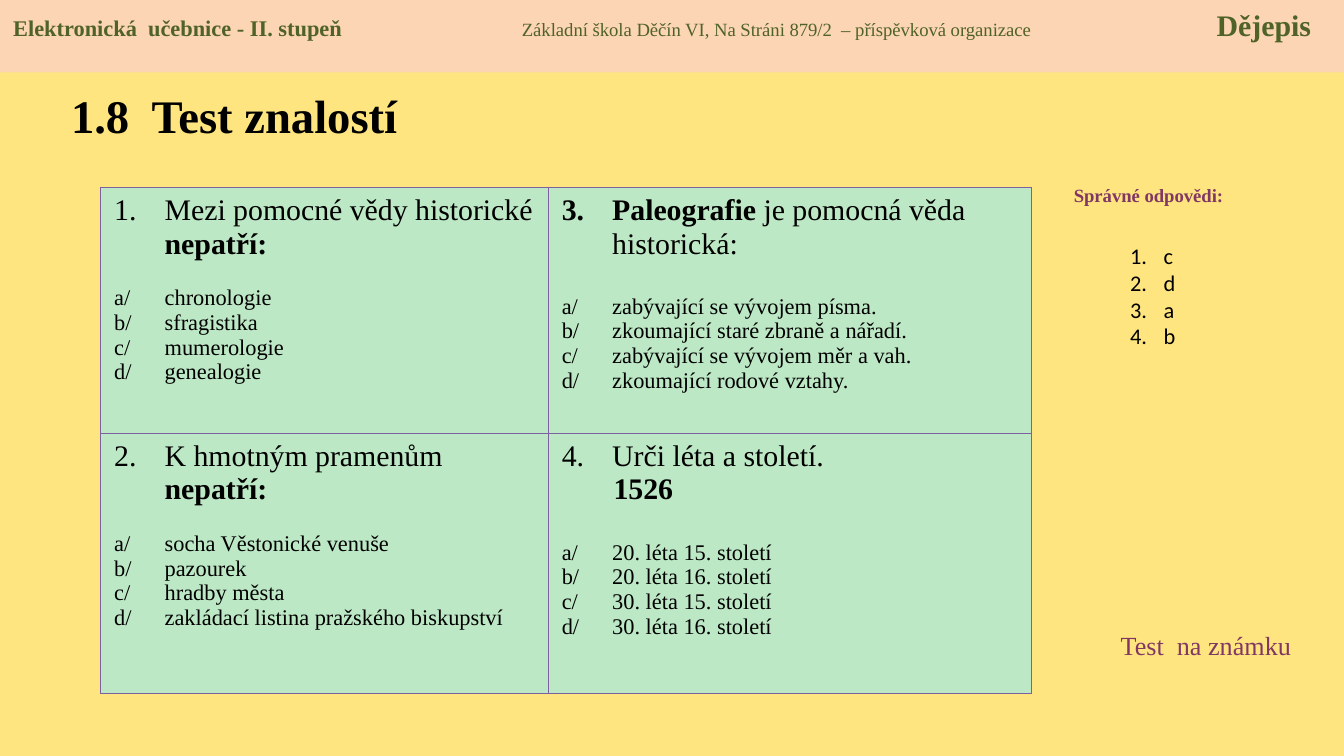
from lxml import etree
from pptx import Presentation
from pptx import util as u
from pptx.dml.color import RGBColor
from pptx.enum import shapes, text
from pptx.oxml import ns

COLORS = {
    "page": "FFE57F", "band": "FCD5B5", "cell": "BDE8C5", "border": "7D60A0",
    "ink": "000000", "green": "4F6228", "plum": "813763",
}
SERIF, SANS = "Times New Roman", "Calibri"
COLUMNS = 100  # grid columns across the slide; rows have the same pitch
HANG = 3.75

QUESTIONS = [
    [
        dict(number=1, title=[("Mezi pomocné vědy historické ", False), ("nepatří:", True)], gap=13.3,
             options=["chronologie", "sfragistika", "mumerologie", "genealogie"]),
        dict(number=3, title=[("Paleografie", True), (" je pomocná věda historická:", False)], gap=18,
             options=["zabývající se vývojem písma.", "zkoumající staré zbraně a nářadí.",
                      "zabývající se vývojem měr a vah.", "zkoumající rodové vztahy."]),
    ],
    [
        dict(number=2, title=[("K hmotným pramenům ", False), ("nepatří:", True)], gap=13.3,
             options=["socha Věstonické venuše", "pazourek", "hradby města",
                      "zakládací listina pražského biskupství"]),
        dict(number=4, title=[("Urči léta a století.", False)], year="1526", gap=18,
             options=["20. léta 15. století", "20. léta 16. století",
                      "30. léta 15. století", "30. léta 16. století"]),
    ],
]


def add_child(parent, tag, **attributes):
    values = {name: str(value) for name, value in attributes.items()}
    return etree.SubElement(parent, ns.qn(tag), values)


class Page:
    """Draws styled elements on one slide, with lengths in grid units."""

    def __init__(self, deck):
        self.pitch = deck.slide_width / COLUMNS
        self.slide = deck.slides.add_slide(deck.slide_layouts[6])
        self.paint(self.slide.background.fill, "page")

    def size(self, units):
        return u.Emu(round(units * self.pitch))

    def area(self, *units):
        return [self.size(unit) for unit in units]

    def paint(self, fill, color):
        fill.solid()
        fill.fore_color.rgb = RGBColor.from_string(COLORS[color])

    def span(self, para, words, color="ink", **style):
        span = para.add_run()
        span.text = words
        for name, value in {"name": SERIF, "size": 12, "bold": False, **style}.items():
            setattr(span.font, name, u.Pt(value) if name == "size" else value)
        span.font.color.rgb = RGBColor.from_string(COLORS[color])

    def indent(self, para, margin, hang=0, number=None):
        """Set the indents, and number the paragraph if a number is given."""
        properties = para._p.get_or_add_pPr()
        properties.set("marL", str(self.size(margin)))
        properties.set("indent", str(-self.size(hang)))
        if number:
            add_child(properties, "a:buAutoNum", type="arabicPeriod", startAt=number)

    def tabs(self, para, *stops):
        tab_list = add_child(para._p.get_or_add_pPr(), "a:tabLst")
        for stop in stops:
            add_child(tab_list, "a:tab", pos=self.size(stop), algn="l")

    def label(self, area, words=None, frame=None, align=text.PP_ALIGN.LEFT, **style):
        box = self.slide.shapes.add_textbox(*self.area(*area)).text_frame
        for name, value in {"word_wrap": True, **(frame or {})}.items():
            setattr(box, name, value)
        if words:
            box.paragraphs[0].alignment = align
            self.span(box.paragraphs[0], words, **style)
        return box

    def band(self, area, parts, stops):
        """Draw the header strip, its parts set apart by tab stops."""
        strip = self.slide.shapes.add_shape(shapes.MSO_SHAPE.RECTANGLE, *self.area(*area))
        strip.shadow.inherit = False
        self.paint(strip.fill, "band")
        strip.line.fill.background()
        strip.text_frame.word_wrap = True
        strip.text_frame.vertical_anchor = text.MSO_ANCHOR.TOP
        para = strip.text_frame.paragraphs[0]
        para.alignment = text.PP_ALIGN.LEFT
        self.tabs(para, *stops)
        for index, (words, size, bold) in enumerate(parts):
            lead = "\t" if index else ""
            self.span(para, lead + words, "green", size=size, bold=bold)

    def border(self, cell):
        properties = cell._tc.get_or_add_tcPr()
        for index, side in enumerate(("a:lnL", "a:lnR", "a:lnT", "a:lnB")):
            line = add_child(properties, side, w=u.Pt(0.75))
            add_child(add_child(line, "a:solidFill"), "a:srgbClr", val=COLORS["border"])
            properties.insert(index, line)

    def question(self, cell, number, title, options, gap, year=None):
        self.paint(cell.fill, "cell")
        self.border(cell)
        frame = cell.text_frame
        para = frame.paragraphs[0]
        self.indent(para, HANG, HANG, number)
        for words, bold in title:
            self.span(para, words, size=16, bold=bold)
        if year:
            para = frame.add_paragraph()
            self.indent(para, HANG + 0.1)
            self.span(para, year, size=16, bold=True)
        for index, (letter, option) in enumerate(zip("abcd", options)):
            para = frame.add_paragraph()
            para.space_before = u.Pt(0 if index else gap)
            self.indent(para, HANG, HANG)
            self.span(para, f"{letter}/\t{option}")

    def quiz(self, left, top, widths, heights, questions):
        area = self.area(left, top, sum(widths), sum(heights))
        table = self.slide.shapes.add_table(len(heights), len(widths), *area).table
        for column, width in zip(table.columns, widths):
            column.width = self.size(width)
        for row, height, row_questions in zip(table.rows, heights, questions):
            row.height = self.size(height)
            for cell, question in zip(row.cells, row_questions):
                self.question(cell, **question)

    def answers(self, area, letters):
        frame = self.label(area, frame={"margin_top": self.size(2.5)})
        for index, letter in enumerate(letters):
            para = frame.add_paragraph() if index else frame.paragraphs[0]
            self.indent(para, 2.5, 2.5, 1)
            self.span(para, letter, name=SANS)


def main():
    deck = Presentation()
    deck.slide_width = u.Inches(10)
    deck.slide_height = u.Emu(deck.slide_width * 9 // 16)
    page = Page(deck)
    page.label((4.3, 5.3, 31.9, 6.5), "1.8  Test znalostí", size=25, bold=True,
               frame={"vertical_anchor": text.MSO_ANCHOR.MIDDLE})
    page.label((77.6, 13.2, 15.7, 2.7), "Správné odpovědi:", size=10, bold=True,
               color="plum", align=text.PP_ALIGN.CENTER)
    page.quiz(7.5, 13.95, (33.3, 35.95), (18.3, 19.35), QUESTIONS)
    page.answers((83.1, 15.5, 5.5, 13.1), "cdab")
    page.label((82.4, 46.35, 15.7, 3.4), "Test  na známku", size=14, color="plum")
    page.band((0, 0, COLUMNS, 5.4), [
        ("Elektronická  učebnice - II. stupeň", 12, True),
        ("Základní škola Děčín VI, Na Stráni 879/2  – příspěvková organizace", 10, False),
        ("Dějepis", 16, True),
    ], stops=(37.85, 89.55))
    deck.save("out.pptx")


if __name__ == "__main__":
    main()
